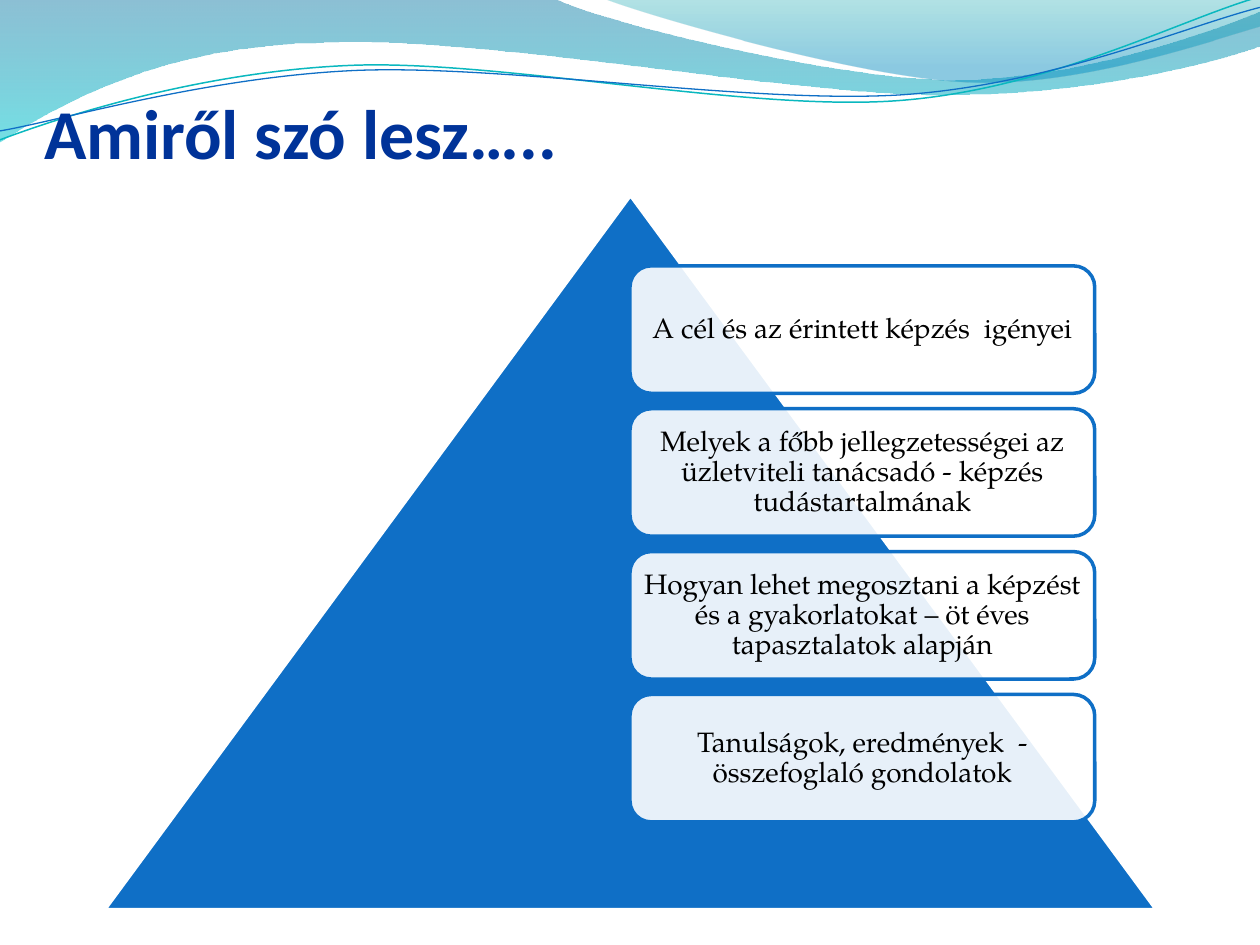
from lxml.etree import SubElement
from pptx import Presentation
from pptx.dml.color import RGBColor
from pptx.enum.shapes import MSO_SHAPE as Shape
from pptx.enum.text import MSO_ANCHOR as Anchor, PP_ALIGN as Align
from pptx.oxml.ns import qn
from pptx.util import Cm, Pt

TITLE = "Amiről szó lesz….."
TOPICS = [
    "A cél és az érintett képzés  igényei",
    "Melyek a főbb jellegzetességei az üzletviteli tanácsadó - képzés tudástartalmának",
    "Hogyan lehet megosztani a képzést és a gyakorlatokat – öt éves tapasztalatok alapján",
    "Tanulságok, eredmények  - összefoglaló gondolatok",
]
BLUE, NAVY, WHITE, BLACK = "0F6FC6", "003399", "FFFFFF", "000000"

# Outlines in cm: a start point, then steps of one point (straight) or three (Bézier curve).
# Gradient stops are (position, colour, opacity in %), from top to bottom.
WAVES = [
    ([(0, -0.03), [(11.18, -0.03)],
      [(12.09, 0.43), (16.87, 1.6), (19.25, 1.6)],
      [(21.67, 1.6), (24.33, 0.66), (25.4, 0.23)],
      [(25.43, 0.91)],
      [(24.97, 1.12), (22.1, 1.93), (18.95, 1.91)],
      [(15.8, 1.91), (9.7, 0.71), (6.53, 0.86)],
      [(3.28, 0.89), (1.17, 2.11), (-0.03, 2.87)]],
     [(0, "0074A1", 45), (1, "00C6CF", 55)]),
    ([(12.17, -0.03),
      [(12.93, 0.28), (17.32, 1.57), (19.53, 1.65)],
      [(21.74, 1.75), (24.41, 0.81), (25.4, 0.53)],
      [(25.4, 0)]],
     [(0, "00A1A9", 30), (0.8, "008BBF", 45)]),
]
RIPPLES = [
    ([(0, 2.82),
      [(1.22, 2.36), (4.01, 1.45), (7.04, 1.32)],
      [(10.03, 1.19), (15.06, 2.26), (18.11, 2.03)],
      [(21.16, 1.8), (23.83, 0.38), (25.35, -0.05)]], "0AB8BF", 0.85),
    ([(0, 2.64),
      [(1.19, 2.44), (4.17, 1.55), (7.19, 1.42)],
      [(10.24, 1.3), (15.16, 2.11), (18.21, 1.91)],
      [(21.23, 1.7), (23.9, 0.53), (25.4, 0.15)]], BLUE, 0.75),
]
BOX_LEFT, BOX_TOP, BOX_WIDTH, BOX_HEIGHT, BOX_PITCH = 12.7, 5.36, 9.37, 2.57, 2.88


def rgb(colour):
    return RGBColor.from_string(colour)


def set_opacity(shape, percents):
    """Give the colours of the shape's fill, in order, these opacities."""
    colours = shape._element.spPr.iter(qn("a:srgbClr"))
    for colour, percent in zip(colours, percents):
        SubElement(colour, qn("a:alpha")).set("val", str(percent * 1000))


def add_outline(shapes, outline, close):
    """Draw straight steps through the end points, then bend those that have control points."""
    (x, y), *steps = outline
    builder = shapes.build_freeform(Cm(x), Cm(y))
    builder.add_line_segments([(Cm(x), Cm(y)) for *_, (x, y) in steps], close=close)
    shape = builder.convert_to_shape()
    shape.shadow.inherit = False
    straights = list(shape._element.spPr.iter(qn("a:lnTo")))
    for straight, (*controls, _) in zip(straights, steps):
        if controls:
            straight.tag = qn("a:cubicBezTo")
        for place, (x, y) in enumerate(controls):
            control = SubElement(straight, qn("a:pt"))
            control.set("x", str(Cm(x) - shape.left))
            control.set("y", str(Cm(y) - shape.top))
            straight.insert(place, control)
    return shape


def add_wave(shapes, outline, stops):
    wave = add_outline(shapes, outline, close=True)
    wave.line.fill.background()
    wave.fill.gradient()
    wave.fill.gradient_angle = 270
    for stop, (position, colour, _) in zip(wave.fill.gradient_stops, stops):
        stop.position = position
        stop.color.rgb = rgb(colour)
    set_opacity(wave, [opacity for *_, opacity in stops])


def set_line(shape, colour, width):
    shape.line.color.rgb = rgb(colour)
    shape.line.width = Pt(width)


def add_solid(shapes, kind, left, top, width, height, fill, line):
    shape = shapes.add_shape(kind, Cm(left), Cm(top), Cm(width), Cm(height))
    shape.shadow.inherit = False
    shape.fill.solid()
    shape.fill.fore_color.rgb = rgb(fill)
    set_line(shape, line, 2)
    return shape


def write(shape, text, font, size, colour, anchor, align, margins, bold=False):
    frame = shape.text_frame
    frame.word_wrap = True
    frame.vertical_anchor = anchor
    frame.margin_left, frame.margin_top, frame.margin_right, frame.margin_bottom = map(Cm, margins)
    frame.text = text
    paragraph = frame.paragraphs[0]
    paragraph.alignment = align
    style = paragraph.runs[0].font
    style.name, style.size, style.bold = font, Pt(size), bold
    style.color.rgb = rgb(colour)
    return paragraph


def main():
    deck = Presentation()
    deck.slide_width, deck.slide_height = Cm(25.4), Cm(19.05)
    shapes = deck.slides.add_slide(deck.slide_layouts[6]).shapes

    for outline, stops in WAVES:
        add_wave(shapes, outline, stops)
    for outline, colour, width in RIPPLES:
        ripple = add_outline(shapes, outline, close=False)
        ripple.fill.background()
        set_line(ripple, colour, width)

    add_solid(shapes, Shape.ISOSCELES_TRIANGLE, 2.11, 3.94, 21.2, 14.4, BLUE, WHITE)
    for row, topic in enumerate(TOPICS):
        box = add_solid(shapes, Shape.ROUNDED_RECTANGLE, BOX_LEFT, BOX_TOP + row * BOX_PITCH,
                        BOX_WIDTH, BOX_HEIGHT, WHITE, BLUE)
        set_opacity(box, [90])
        paragraph = write(box, topic, "TeX Gyre Pagella", 16, BLACK,
                          Anchor.MIDDLE, Align.CENTER, [0.05] * 4)
        paragraph.line_spacing = 0.9

    title = shapes.add_textbox(Cm(0.89), Cm(0.71), Cm(23.44), Cm(2.79))
    write(title, TITLE, "Calibri", 40, NAVY, Anchor.BOTTOM, Align.LEFT, [0, 0.13, 0, 0], bold=True)

    deck.save("out.pptx")


if __name__ == "__main__":
    main()
